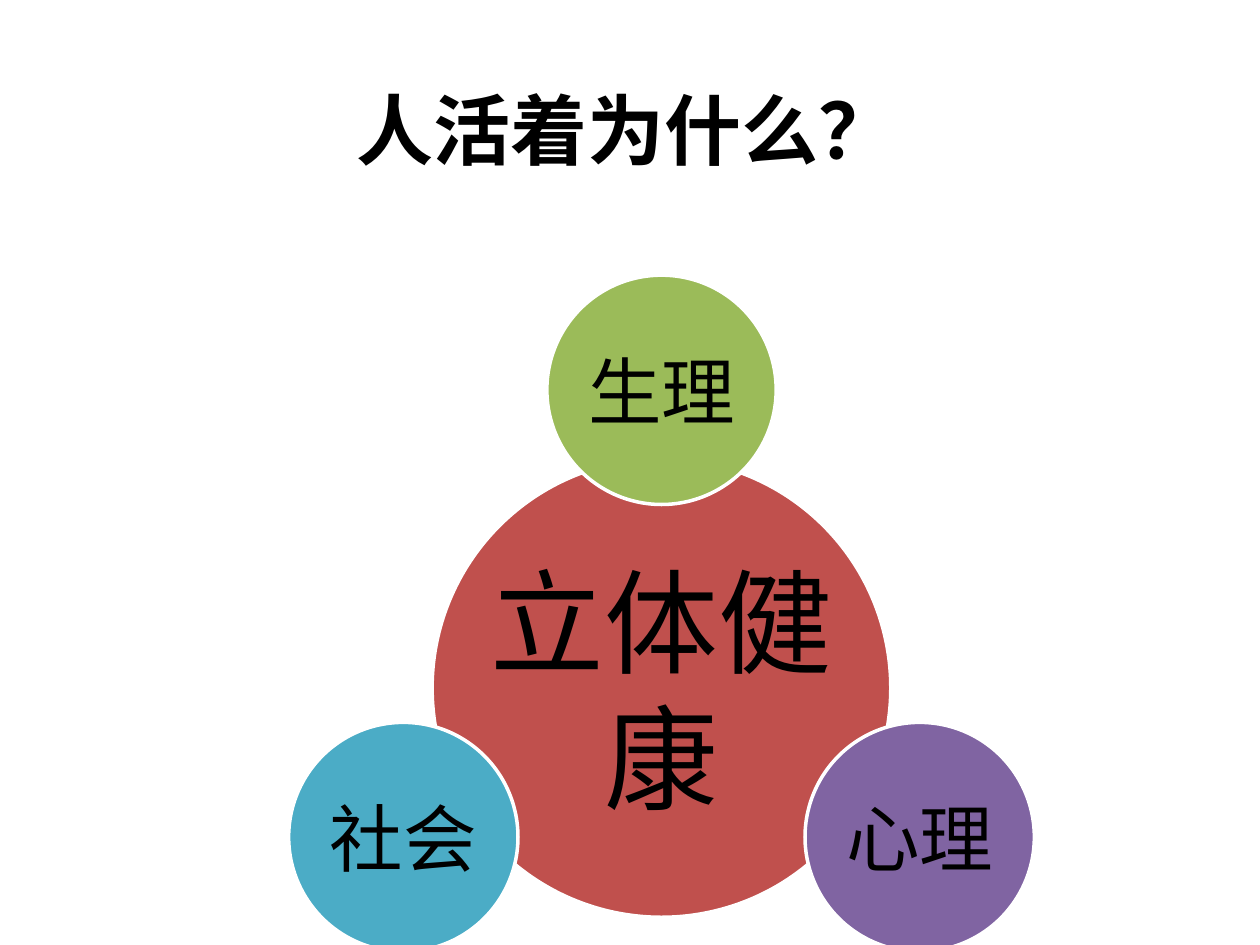
from math import cos, radians, sin

from pptx import Presentation
from pptx.dml.color import RGBColor
from pptx.enum.shapes import MSO_SHAPE
from pptx.enum.text import MSO_ANCHOR, MSO_AUTO_SIZE, PP_ALIGN
from pptx.util import Inches, Pt

OVAL = MSO_SHAPE.OVAL
MIDDLE = MSO_ANCHOR.MIDDLE
NO_FIT = MSO_AUTO_SIZE.NONE
CENTER = PP_ALIGN.CENTER

THEME = {
    "font": "Calibri", "text": "000000", "edge": "FFFFFF",
    "core": "C0504D", "body": "9BBB59", "mind": "8064A2", "social": "4BACC6",
    "title_pt": 44, "core_pt": 65, "node_pt": 42, "edge_pt": 2,
}


def write(shape, text, size, bold=False, inset=0.1):
    tf = shape.text_frame
    tf.word_wrap = True
    tf.auto_size = NO_FIT
    tf.vertical_anchor = MIDDLE
    tf.margin_left = tf.margin_right = Inches(inset)
    tf.margin_top = tf.margin_bottom = Inches(inset / 2 if bold else inset)
    p = tf.paragraphs[0]
    p.alignment = CENTER
    r = p.add_run()
    r.text = text
    r.font.name = THEME["font"]
    r.font.size = Pt(size)
    r.font.bold = bold
    r.font.color.rgb = RGBColor.from_string(THEME["text"])


prs = Presentation()
prs.slide_width, prs.slide_height = Inches(10), Inches(7.5)
W, H = prs.slide_width, prs.slide_height
s = prs.slides.add_slide(prs.slide_layouts[5])

title = s.shapes.title
title.left, title.top = Inches(-0.03), int(H * 0.08)
title.width, title.height = W, Inches(0.84)
write(title, "人活着为什么？", THEME["title_pt"], bold=True)

cx, cy = W * 0.525, H * 0.728
core = Inches(3.64)
node = core / 2
ring = core * 0.65

circles = [("立体健康", "core", cx, cy, core, THEME["core_pt"], 0.09)]
for i, (text, key) in enumerate([("生理", "body"), ("心理", "mind"), ("社会", "social")]):
    angle = radians(120 * i - 90)
    x, y = cx + ring * cos(angle), cy + ring * sin(angle)
    circles.append((text, key, x, y, node, THEME["node_pt"], 0.06))

for text, key, x, y, size, pt, inset in circles:
    box = [int(v) for v in (x - size / 2, y - size / 2, size, size)]
    sp = s.shapes.add_shape(OVAL, *box)
    sp.shadow.inherit = False
    sp.fill.solid()
    sp.fill.fore_color.rgb = RGBColor.from_string(THEME[key])
    sp.line.color.rgb = RGBColor.from_string(THEME["edge"])
    sp.line.width = Pt(THEME["edge_pt"])
    write(s.shapes.add_textbox(*box), text, pt, inset=inset)

prs.save("out.pptx")
